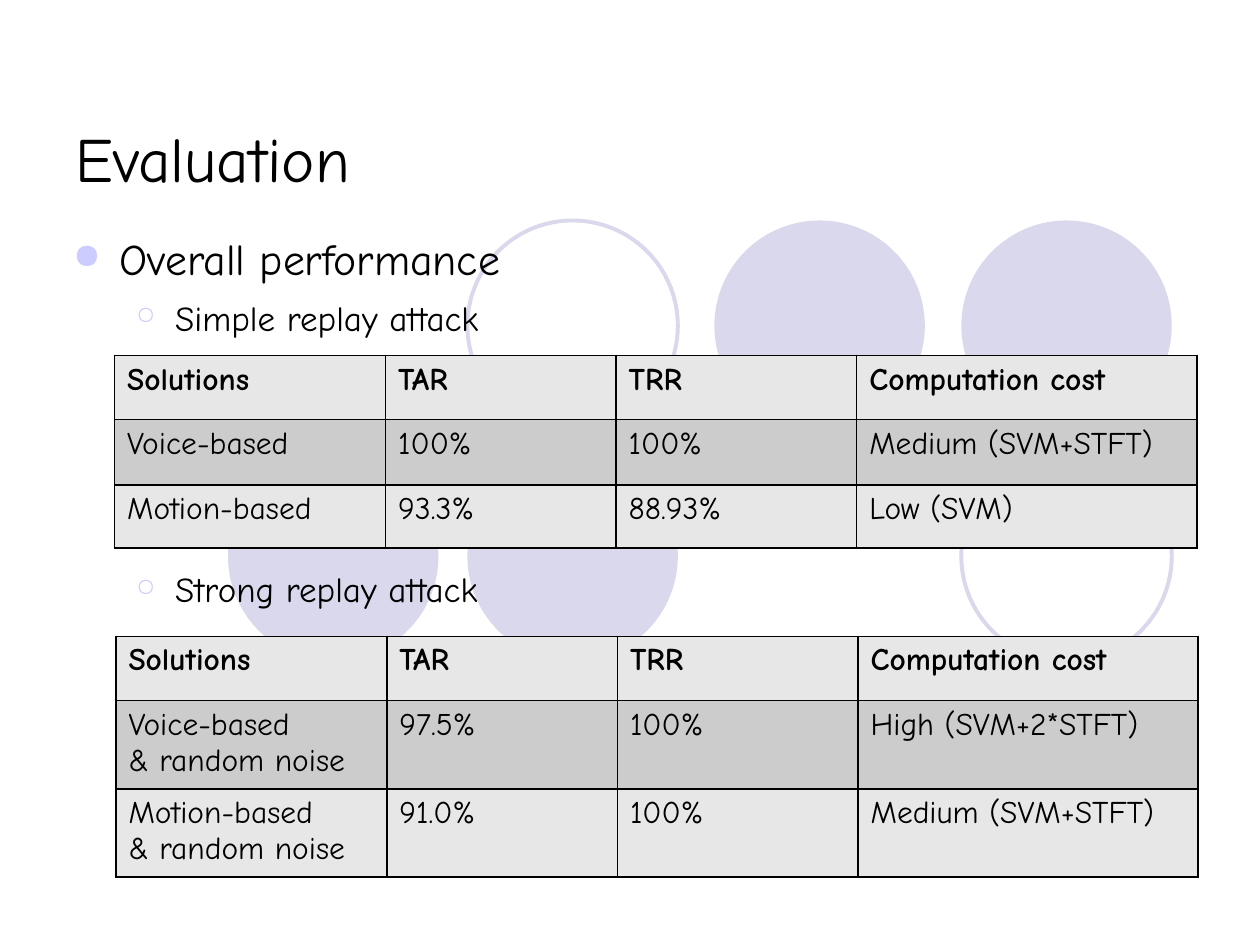
from lxml import etree
from pptx import Presentation
from pptx.dml.color import RGBColor
from pptx.enum.shapes import MSO_SHAPE
from pptx.enum.text import MSO_ANCHOR
from pptx.oxml.ns import qn
from pptx.util import Inches, Pt

OVAL = MSO_SHAPE.OVAL
TOP, BOTTOM = MSO_ANCHOR.TOP, MSO_ANCHOR.BOTTOM
FONT = "Comic Neue"
COLORS = {"text": "000000", "circle": "D9D8EC", "bullet": "CCCCFF",
          "light": "E7E7E7", "dark": "CCCCCC", "border": "000000"}

# Content
TITLE = "Evaluation"
# text, size, left margin, hanging indent, space before, bullet, bullet size %
# The last item leaves room for the first table.
OUTLINE = [
    ("Overall performance", 25, 0.37, 0.37, 0, "●", 80),
    ("Simple replay attack", 20, 0.81, 0.31, 6.8, "○", 70),
    ("Strong replay attack", 20, 0.81, 0.31, 131, "○", 70),
]
HEADER = ["Solutions", "TAR", "TRR", "Computation cost"]
COL_WIDTHS = [2.15, 1.83, 1.91, 2.7]
TABLES = [
    {"left": 0.91, "top": 2.82, "heights": [0.51, 0.52, 0.5], "rows": [
        ["Voice-based", "100%", "100%", "Medium (SVM+STFT)"],
        ["Motion-based", "93.3%", "88.93%", "Low (SVM)"]]},
    {"left": 0.92, "top": 5.05, "heights": [0.51, 0.68, 0.68], "rows": [
        ["Voice-based\n& random noise", "97.5%", "100%", "High (SVM+2*STFT)"],
        ["Motion-based\n& random noise", "91.0%", "100%", "Medium (SVM+STFT)"]]},
]
# Background circles: left, top, filled
DIAMETER = 1.67
CIRCLES = [(7.63, 1.75, True), (5.67, 1.75, True), (3.71, 1.75, False),
           (3.71, 3.58, True), (1.81, 3.58, True), (7.63, 3.58, False)]


def rgb(name):
    return RGBColor.from_string(COLORS[name])


def add_text(p, text, size=18, bold=False, color="text"):
    r = p.add_run()
    r.text = text
    r.font.name = FONT
    r.font.size = Pt(size)
    r.font.bold = bold
    r.font.color.rgb = rgb(color)


def add_box(slide, left, top, width, height, inset=(0, 0), anchor=TOP):
    tf = slide.shapes.add_textbox(*map(Inches, (left, top, width, height))).text_frame
    tf.word_wrap = True
    tf.vertical_anchor = anchor
    tf.margin_left = tf.margin_right = Inches(inset[0])
    tf.margin_top = tf.margin_bottom = Inches(inset[1])
    return tf


def set_bullet(p, char, percent, margin, hanging):
    pPr = p._p.get_or_add_pPr()
    pPr.set("marL", str(Inches(margin)))
    pPr.set("indent", str(-Inches(hanging)))
    color = etree.SubElement(pPr, qn("a:buClr"))
    etree.SubElement(color, qn("a:srgbClr"), val=COLORS["bullet"])
    etree.SubElement(pPr, qn("a:buSzPct"), val=str(percent * 1000))
    etree.SubElement(pPr, qn("a:buChar"), char=char)


def set_borders(cell):
    tcPr = cell._tc.get_or_add_tcPr()
    for side in ("lnL", "lnR", "lnT", "lnB"):
        ln = etree.SubElement(tcPr, qn(f"a:{side}"), w=str(Pt(1)))
        fill = etree.SubElement(ln, qn("a:solidFill"))
        etree.SubElement(fill, qn("a:srgbClr"), val=COLORS["border"])


def add_results(slide, left, top, heights, rows):
    rows = [HEADER] + rows
    table = slide.shapes.add_table(
        len(rows), len(HEADER), Inches(left), Inches(top),
        Inches(sum(COL_WIDTHS)), Inches(sum(heights))).table
    table.first_row = table.horz_banding = False
    for column, width in zip(table.columns, COL_WIDTHS):
        column.width = Inches(width)
    for i, (values, height) in enumerate(zip(rows, heights)):
        table.rows[i].height = Inches(height)
        for j, value in enumerate(values):
            cell = table.cell(i, j)
            set_borders(cell)
            cell.fill.solid()
            cell.fill.fore_color.rgb = rgb("dark" if i % 2 else "light")
            tf = cell.text_frame
            for k, line in enumerate(value.split("\n")):
                p = tf.add_paragraph() if k else tf.paragraphs[0]
                add_text(p, line, bold=i == 0)


def main():
    prs = Presentation()
    prs.slide_width, prs.slide_height = Inches(10), Inches(7.5)
    s = prs.slides.add_slide(prs.slide_layouts[6])

    # Background circles
    for left, top, filled in CIRCLES:
        sp = s.shapes.add_shape(OVAL, Inches(left), Inches(top),
                                Inches(DIAMETER), Inches(DIAMETER))
        sp.shadow.inherit = False
        if filled:
            sp.fill.solid()
            sp.fill.fore_color.rgb = rgb("circle")
            sp.line.fill.background()
        else:
            sp.fill.background()
            sp.line.color.rgb = rgb("circle")
            sp.line.width = Pt(2.25)

    # Title
    tf = add_box(s, 0.5, 0.35, 9, 1.25, inset=(0.1, 0.05), anchor=BOTTOM)
    add_text(tf.paragraphs[0], TITLE, size=36)

    # Outline
    tf = add_box(s, 0.58, 1.84, 9.17, 4.26)
    for i, (text, size, margin, hanging, before, char, percent) in enumerate(OUTLINE):
        p = tf.add_paragraph() if i else tf.paragraphs[0]
        if before:
            p.space_before = Pt(before)
        set_bullet(p, char, percent, margin, hanging)
        add_text(p, text, size=size)

    # Result tables
    for table in TABLES:
        add_results(s, **table)

    prs.save("out.pptx")


if __name__ == "__main__":
    main()
